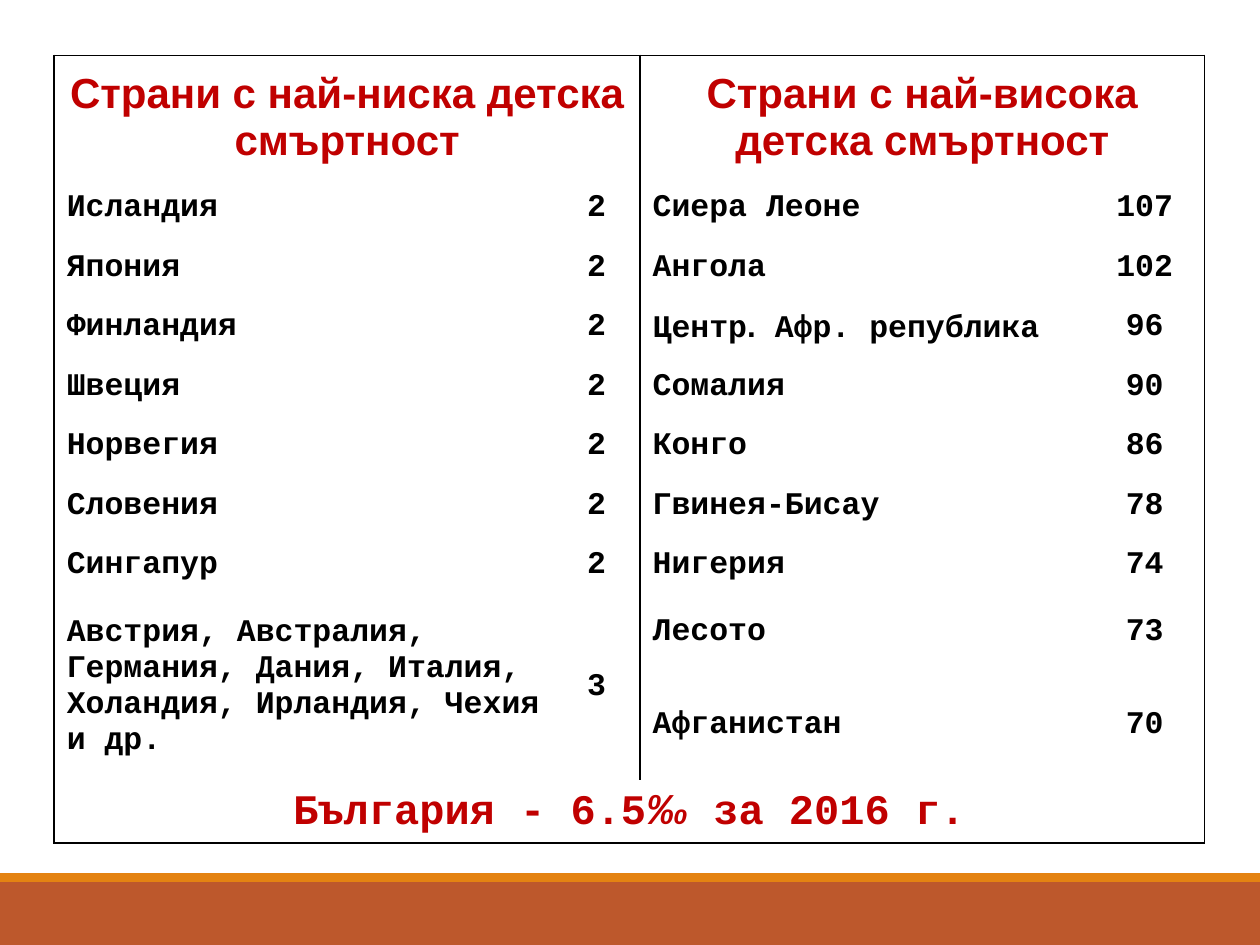
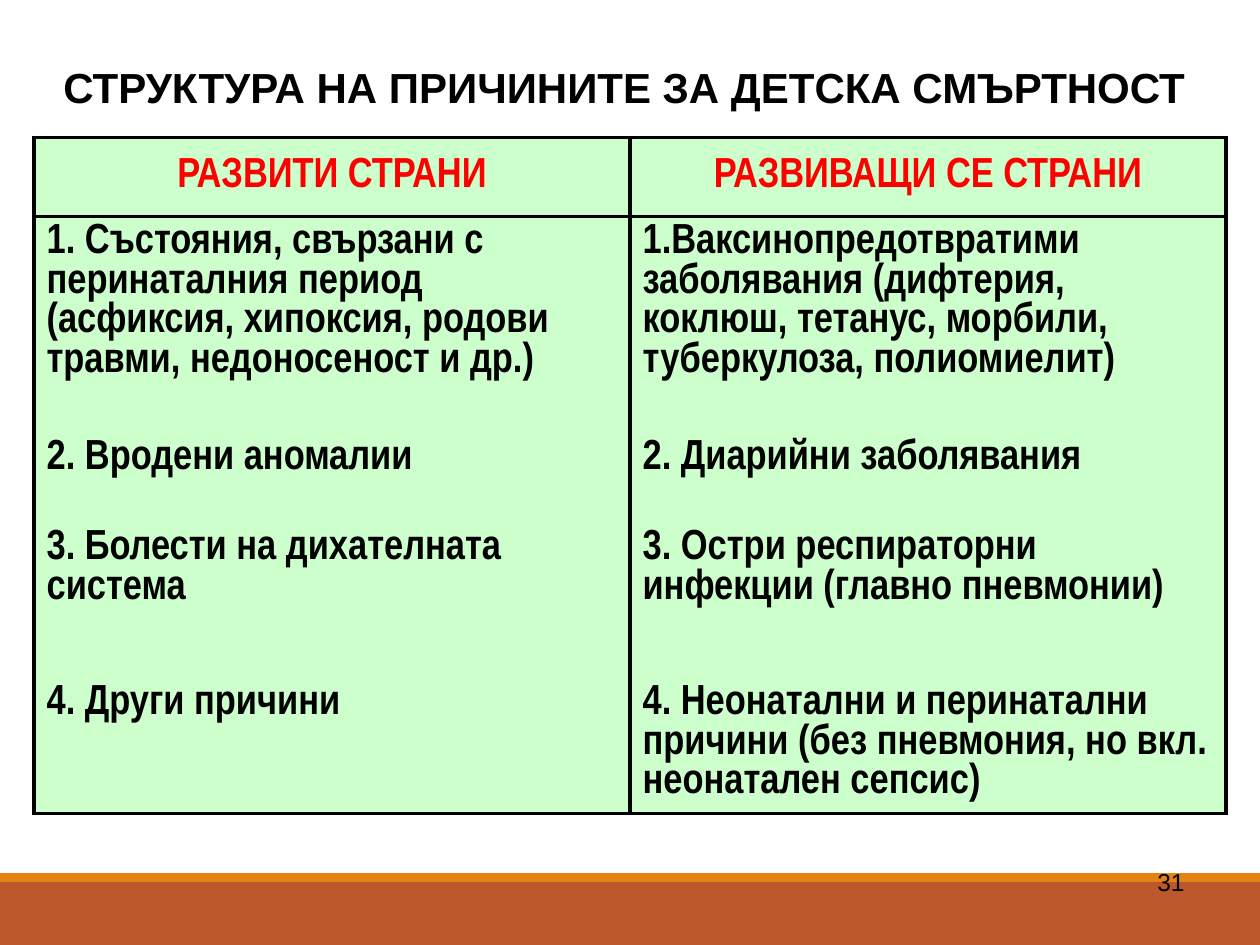
from lxml import etree
from pptx import Presentation
from pptx.dml.color import RGBColor
from pptx.enum.shapes import MSO_SHAPE
from pptx.enum.text import MSO_ANCHOR, PP_ALIGN
from pptx.oxml.ns import qn
from pptx.util import Inches, Pt

RECTANGLE = MSO_SHAPE.RECTANGLE
LEFT, CENTER, RIGHT = PP_ALIGN.LEFT, PP_ALIGN.CENTER, PP_ALIGN.RIGHT
TOP, MIDDLE = MSO_ANCHOR.TOP, MSO_ANCHOR.MIDDLE

COLORS = {
    "white": "FFFFFF",
    "black": "000000",
    "rust": "BD582C",
    "orange": "E48312",
    "crimson": "C00000",
    "red": "FF0000",
    "mint": "CCFFCC",
}
SANS, NARROW, MONO = "Arial", "Arial Narrow", "Courier New"
WIDTH, HEIGHT = Inches(10), Inches(7.5)


def write(frame, spans, size, font, color, align=LEFT, bold=True):
    para = frame.paragraphs[0]
    para.alignment = align
    para.font.size = Pt(size)
    para.font.name = font
    para.font.bold = bold
    para.font.color.rgb = RGBColor.from_string(COLORS[color])
    for text, span_font, italic in spans if isinstance(spans, list) else [(spans, None, None)]:
        span = para.add_run()
        span.text = text
        if span_font:
            span.font.name = span_font
            span.font.italic = italic


def style_cell(cell, fill, anchor, sides, line_width):
    cell.fill.solid()
    cell.fill.fore_color.rgb = RGBColor.from_string(COLORS[fill])
    cell.vertical_anchor = anchor
    properties = cell._tc.get_or_add_tcPr()
    for index, side in enumerate("LRTB"):
        line = etree.Element(qn(f"a:ln{side}"))
        if side in sides:
            line.set("w", str(Pt(line_width)))
            paint = etree.SubElement(line, qn("a:solidFill"))
            etree.SubElement(paint, qn("a:srgbClr"), val=COLORS["black"])
        else:
            line.set("w", "0")
            etree.SubElement(line, qn("a:noFill"))
        properties.insert(index, line)


deck = Presentation()
deck.slide_width, deck.slide_height = WIDTH, HEIGHT
pages, tables = [], []

GRIDS = [
    (0.43, 0.44, [3.96, 0.69, 3.53, 0.95],
     [0.98, 0.47, 0.47, 0.48, 0.47, 0.47, 0.47, 0.47, 0.6, 0.87, 0.47]),
    (0.27, 1.09, [4.73, 4.73], [0.63, 1.71, 0.72, 1.23, 1.08]),
]
BANDS = [("rust", 7, 0.5), ("orange", 6.93, 0.07)]

for left, top, columns, rows in GRIDS:
    page = deck.slides.add_slide(deck.slide_layouts[6])
    for color, band_top, band_height in BANDS:
        band = page.shapes.add_shape(RECTANGLE, 0, Inches(band_top), WIDTH, Inches(band_height))
        band.shadow.inherit = False
        band.fill.solid()
        band.fill.fore_color.rgb = RGBColor.from_string(COLORS[color])
        band.line.fill.background()
    table = page.shapes.add_table(
        len(rows), len(columns), Inches(left), Inches(top),
        Inches(sum(columns)), Inches(sum(rows))).table
    table.first_row = table.horz_banding = False
    for column, width in zip(table.columns, columns):
        column.width = Inches(width)
    for row, height in zip(table.rows, rows):
        row.height = Inches(height)
    pages.append(page)
    tables.append(table)

countries, causes = tables

LOWEST = [
    ("Исландия", "2"), ("Япония", "2"), ("Финландия", "2"), ("Швеция", "2"),
    ("Норвегия", "2"), ("Словения", "2"), ("Сингапур", "2"),
    ("Австрия, Австралия, Германия, Дания, Италия, Холандия, Ирландия, Чехия и др.", "3"),
]
HIGHEST = [
    ("Сиера Леоне", "107"), ("Ангола", "102"),
    ([("Центр", None, None), (".", SANS, False), (" Афр. република", None, None)], "96"),
    ("Сомалия", "90"), ("Конго", "86"), ("Гвинея-Бисау", "78"),
    ("Нигерия", "74"), ("Лесото", "73"), ("Афганистан", "70"),
]
BULGARIA = [("България - 6.5", None, None), ("‰", SANS, True), (" за 2016 г.", None, None)]
MERGES = [(0, 0, 0, 1), (0, 2, 0, 3), (8, 0, 9, 0), (8, 1, 9, 1), (10, 0, 10, 3)]

for first_row, first_column, last_row, last_column in MERGES:
    countries.cell(first_row, first_column).merge(countries.cell(last_row, last_column))

last = len(countries.rows) - 1
for row in range(last + 1):
    for column in range(4):
        cell = countries.cell(row, column)
        end = column + (cell.span_width if cell.is_merge_origin else 1) - 1
        sides = "L" if column == 0 or (column == 2 and row < last) else ""
        sides += "R" if end == 3 or (end == 1 and row < last) else ""
        sides += "T" if row == 0 else ""
        sides += "B" if row == last else ""
        style_cell(cell, "white", MIDDLE, sides, 1)

HEADINGS = ["Страни с най-ниска детска смъртност", "Страни с най-висока детска смъртност"]
for column, heading, entries in zip((0, 2), HEADINGS, (LOWEST, HIGHEST)):
    write(countries.cell(0, column).text_frame, heading, 24, SANS, "crimson", CENTER)
    for row, (country, rate) in enumerate(entries, 1):
        write(countries.cell(row, column).text_frame, country, 18, MONO, "black")
        write(countries.cell(row, column + 1).text_frame, rate, 18, MONO, "black", CENTER)
write(countries.cell(last, 0).text_frame, BULGARIA, 24, MONO, "crimson", CENTER)

CAUSES = [
    ("РАЗВИТИ СТРАНИ", "РАЗВИВАЩИ СЕ СТРАНИ"),
    ("1. Състояния, свързани с перинаталния период (асфиксия, хипоксия, родови травми, "
     "недоносеност и др.)",
     "1.Ваксинопредотвратими заболявания (дифтерия, коклюш, тетанус, морбили, "
     "туберкулоза, полиомиелит)"),
    ("2. Вродени аномалии", "2. Диарийни заболявания"),
    ("3. Болести на дихателната система", "3. Остри респираторни инфекции (главно пневмонии)"),
    ("4. Други причини",
     "4. Неонатални и перинатални причини (без пневмония, но вкл. неонатален сепсис)"),
]
for row, texts in enumerate(CAUSES):
    sides = "LR" + ("T" if row < 2 else "") + ("B" if row in (0, len(CAUSES) - 1) else "")
    anchor, color, align = (TOP, "black", LEFT) if row else (MIDDLE, "red", CENTER)
    for column, text in enumerate(texts):
        cell = causes.cell(row, column)
        style_cell(cell, "mint", anchor, sides, 2)
        write(cell.text_frame, text, 24, NARROW, color, align)

LABELS = [
    ("СТРУКТУРА НА ПРИЧИНИТЕ ЗА ДЕТСКА СМЪРТНОСТ", (0.36, 0.44, 9.19, 0.5), 24, CENTER, True),
    ("31", (7.17, 6.83, 2.33, 0.52), 14, RIGHT, False),
]
for text, bounds, size, align, bold in LABELS:
    box = pages[1].shapes.add_textbox(*map(Inches, bounds))
    box.text_frame.word_wrap = not bold
    write(box.text_frame, text, size, SANS, "black", align, bold)

deck.save("out.pptx")
